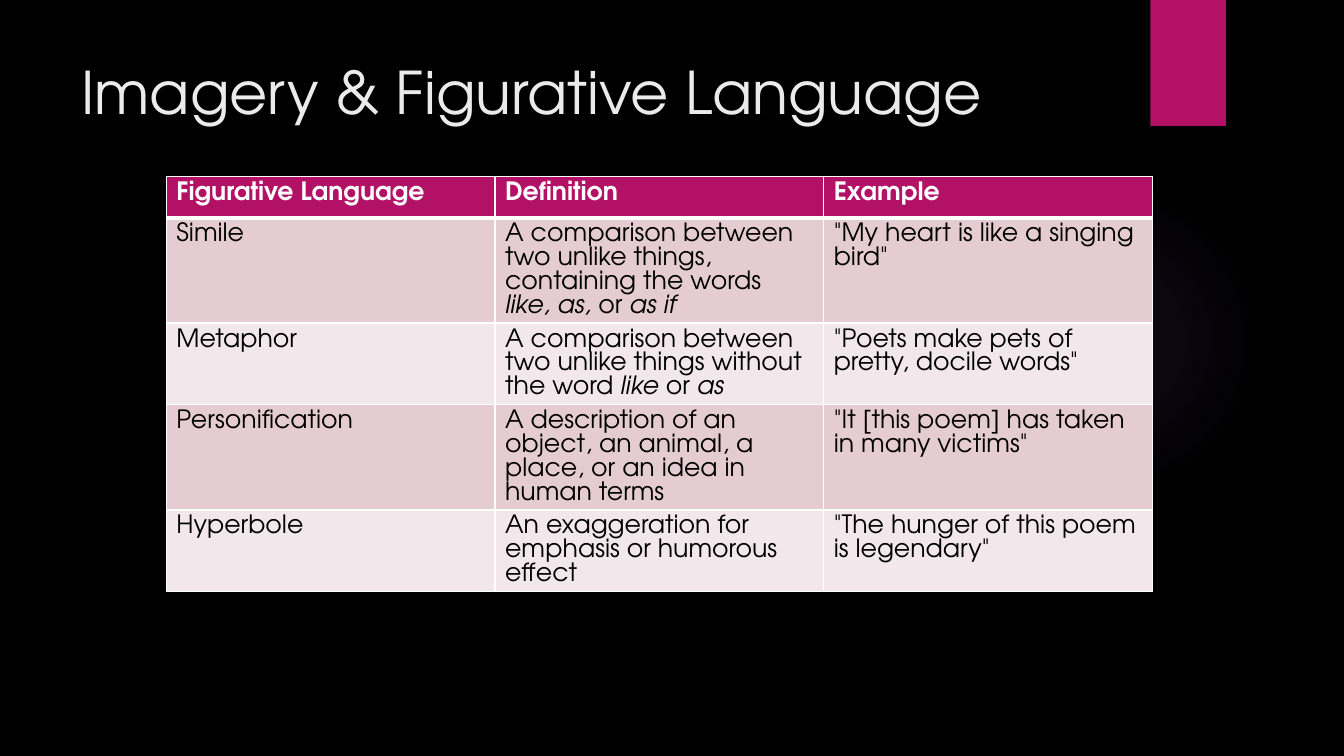
"""Build the slide on imagery and figurative language."""
from lxml import etree
from pptx import Presentation
from pptx.dml.color import RGBColor
from pptx.enum.shapes import MSO_SHAPE as Preset
from pptx.enum.text import MSO_ANCHOR as Anchor
from pptx.oxml import parse_xml
from pptx.oxml.ns import nsdecls, qn
from pptx.util import Inches, Pt

FONT = "TeX Gyre Adventor"
BLACK = RGBColor(0x00, 0x00, 0x00)
WHITE = RGBColor(0xFF, 0xFF, 0xFF)
PALE_GREY = RGBColor(0xEB, 0xEB, 0xEB)
MAGENTA = RGBColor(0xB3, 0x11, 0x66)
BANDS = [RGBColor(0xE5, 0xCC, 0xD3), RGBColor(0xF2, 0xE7, 0xEA)]
GLOW = RGBColor(0x9B, 0x6B, 0xF2)


def write_text(frame, text, size=18, color=BLACK, bold=False, spacing=None):
    """Write text into a frame, with the parts between asterisks in italics."""
    paragraph = frame.paragraphs[0]
    paragraph.line_spacing = spacing
    for index, part in enumerate(text.split("*")):
        if part:
            run = paragraph.add_run()
            run.text = part
            run.font.name = FONT
            run.font.size = Pt(size)
            run.font.bold = bold
            run.font.italic = index % 2 == 1
            run.font.color.rgb = color


def draw_borders(cell, **widths):
    """Give a cell white borders of the given widths in points."""
    properties = cell._tc.get_or_add_tcPr()
    for side, width in widths.items():
        line = etree.SubElement(properties, qn(f"a:ln{side}"), w=str(Pt(width)))
        fill = etree.SubElement(line, qn("a:solidFill"))
        etree.SubElement(fill, qn("a:srgbClr"), val=str(WHITE))


presentation = Presentation()
presentation.slide_width = Inches(13.33)
presentation.slide_height = Inches(7.5)
slide = presentation.slides.add_slide(presentation.slide_layouts[6])
slide.background.fill.solid()
slide.background.fill.fore_color.rgb = BLACK

glow = slide.shapes.add_shape(
    Preset.OVAL, Inches(9.41), Inches(1.83), Inches(3.08), Inches(3.08))
glow.shadow.inherit = False
glow.line.fill.background()
stops = "".join(
    f'<a:gs pos="{position * 1000}"><a:srgbClr val="{GLOW}">'
    f'<a:alpha val="{alpha * 1000}"/></a:srgbClr></a:gs>'
    for position, alpha in [(0, 7), (36, 6), (69, 0), (100, 0)])
glow._element.spPr.find(qn("a:prstGeom")).addnext(parse_xml(
    f'<a:gradFill {nsdecls("a")}><a:gsLst>{stops}</a:gsLst><a:path path="circle">'
    '<a:fillToRect l="50000" t="50000" r="50000" b="50000"/></a:path></a:gradFill>'))

ribbon = slide.shapes.add_shape(
    Preset.RECTANGLE, Inches(11.41), 0, Inches(0.75), Inches(1.25))
ribbon.shadow.inherit = False
ribbon.fill.solid()
ribbon.fill.fore_color.rgb = MAGENTA
ribbon.line.fill.background()

title = slide.shapes.add_textbox(
    Inches(0.71), Inches(0.5), Inches(10.29), Inches(1.53))
title.text_frame.word_wrap = True
title.text_frame.vertical_anchor = Anchor.TOP
write_text(title.text_frame, "Imagery & Figurative Language", size=42, color=PALE_GREY)

rows = [
    (0.41, "Figurative Language", "Definition", "Example"),
    (1.03, "Simile",
     "A comparison between two unlike things, containing the words "
     "*like, as, *or *as if*",
     '"My heart is like a singing bird"'),
    (0.8, "Metaphor",
     "A comparison between two unlike things without the word *like *or *as*",
     '"Poets make pets of pretty, docile words"'),
    (1.03, "Personification",
     "A description of an object, an animal, a place, or an idea in human terms",
     '"It [this poem] has taken in many victims"'),
    (0.8, "Hyperbole",
     "An exaggeration for emphasis or humorous effect",
     '"The hunger of this poem is legendary"'),
]
table = slide.shapes.add_table(
    len(rows), 3, Inches(1.65), Inches(1.75), Inches(9.78),
    Inches(sum(row[0] for row in rows))).table
for row_index, (height, *texts) in enumerate(rows):
    table.rows[row_index].height = Inches(height)
    header = row_index == 0
    for column_index, text in enumerate(texts):
        cell = table.cell(row_index, column_index)
        draw_borders(cell, L=1, R=1, T=3 if row_index == 1 else 1, B=3 if header else 1)
        cell.fill.solid()
        cell.fill.fore_color.rgb = MAGENTA if header else BANDS[(row_index - 1) % 2]
        write_text(cell.text_frame, text, color=WHITE if header else BLACK,
                   bold=header, spacing=Pt(17))

presentation.save("out.pptx")
